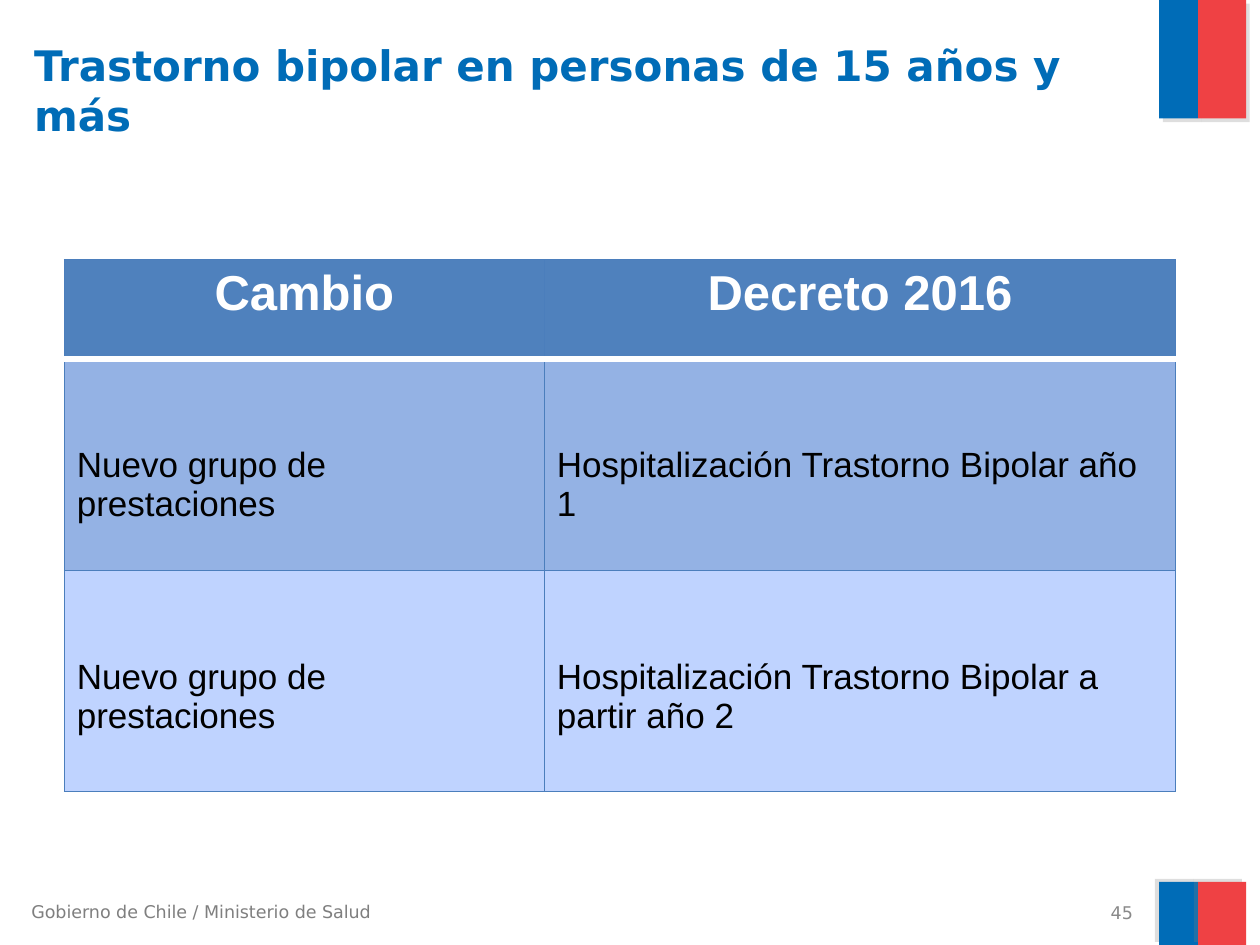
from lxml.etree import SubElement
from pptx import Presentation
from pptx.dml.color import RGBColor as Rgb
from pptx.enum.shapes import MSO_SHAPE as Shape
from pptx.enum.text import MSO_ANCHOR as Anchor, MSO_AUTO_SIZE as AutoSize, PP_ALIGN as Align
from pptx.oxml.ns import qn
from pptx.util import Inches, Pt

COLORS = {
    "blue": "006CB7", "red": "EF4144", "shadow": "808080",
    "footer": "7F7F7F", "number": "898989",
    "header": "4F81BD", "border": "4B7EBC", "white": "FFFFFF", "black": "000000",
    "row_dark": "94B2E4", "row_light": "BFD3FF",
}
HEADING_FONT, TABLE_FONT = "DejaVu Sans", "Arial"
BANDS = [("blue", 9.2, 0.31), ("red", 9.51, 0.38)]  # colour, left, width
COLUMNS = [3.81, 5.01]
ROWS = [0.79, 1.68, 1.75]
CONTENT = [
    ["Cambio", "Decreto 2016"],
    ["Nuevo grupo de prestaciones", "Hospitalización Trastorno Bipolar año 1"],
    ["Nuevo grupo de prestaciones", "Hospitalización Trastorno Bipolar a partir año 2"],
]


def color(name):
    return Rgb.from_string(COLORS[name])


def write(frame, text, size, font, ink, bold=False, align=Align.LEFT):
    frame.text = text
    para = frame.paragraphs[0]
    para.alignment = align
    for span in para.runs:
        span.font.size, span.font.name, span.font.bold = Pt(size), font, bold
        span.font.color.rgb = color(ink)


def add_band(page, name, left, top, width, height, angle):
    """A flag stripe with a hard, translucent shadow."""
    band = page.shapes.add_shape(
        Shape.RECTANGLE, Inches(left), Inches(top), Inches(width), Inches(height))
    band.fill.solid()
    band.fill.fore_color.rgb = color(name)
    band.line.fill.background()
    band.shadow.inherit = False
    effects = band._element.spPr.find(qn("a:effectLst"))
    shadow = SubElement(effects, qn("a:outerShdw"), blurRad="0", dist=str(Pt(3)),
                        dir=str(angle * 60000), algn="ctr", rotWithShape="0")
    tint = SubElement(shadow, qn("a:srgbClr"), val=COLORS["shadow"])
    SubElement(tint, qn("a:alpha"), val="25000")


def add_label(page, text, left, top, width, height, ink, align=Align.LEFT):
    box = page.shapes.add_textbox(Inches(left), Inches(top), Inches(width), Inches(height))
    box.text_frame.word_wrap = True
    box.text_frame.vertical_anchor = Anchor.MIDDLE
    write(box.text_frame, text, 10, HEADING_FONT, ink, align=align)


def format_title(page, text):
    title = page.shapes.title
    title.left, title.top = Inches(0.17), Inches(0.26)
    title.width, title.height = Inches(8.93), Inches(1.25)
    frame = title.text_frame
    frame.auto_size = AutoSize.NONE
    frame.vertical_anchor = Anchor.TOP
    write(frame, text, 24, HEADING_FONT, "blue", bold=True)


def set_borders(cell, **edges):
    """Draw cell edges; each is a (colour, points) pair."""
    props = cell._tc.get_or_add_tcPr()
    for index, side in enumerate(("L", "R", "T", "B")):
        name, points = edges.get(side, ("border", 0.5))
        line = props.makeelement(qn(f"a:ln{side}"), {"w": str(Pt(points))})
        fill = SubElement(line, qn("a:solidFill"))
        SubElement(fill, qn("a:srgbClr"), val=COLORS[name])
        props.insert(index, line)


def add_change_table(page, left, top):
    frame = page.shapes.add_table(
        len(ROWS), len(COLUMNS), Inches(left), Inches(top),
        Inches(sum(COLUMNS)), Inches(sum(ROWS)))
    table = frame.table
    for column, width in zip(table.columns, COLUMNS):
        column.width = Inches(width)
    rule = ("white", 3.78)  # line between header and body
    fills = ["header", "row_dark", "row_light"]
    edges = [{"B": rule}, {"T": rule}, {}]
    for r, texts in enumerate(CONTENT):
        table.rows[r].height = Inches(ROWS[r])
        for c, text in enumerate(texts):
            cell = table.cell(r, c)
            cell.fill.solid()
            cell.fill.fore_color.rgb = color(fills[r])
            set_borders(cell, **edges[r])
            if r == 0:
                write(cell.text_frame, text, 28, TABLE_FONT, "white", True, Align.CENTER)
            else:
                cell.margin_top = Inches(0.69)
                write(cell.text_frame, text, 20, TABLE_FONT, "black")


def main():
    deck = Presentation()
    deck.slide_width, deck.slide_height = Inches(10), Inches(7.5)
    page = deck.slides.add_slide(deck.slide_layouts[5])

    # Flag stripes at the top and bottom corners
    for top, height, angle in [(0, 0.94, 45), (7, 0.5, 215)]:
        for name, left, width in BANDS:
            add_band(page, name, left, top, width, height, angle)

    # Title and table
    format_title(page, "Trastorno bipolar en personas de 15 años y más")
    add_change_table(page, 0.51, 2.06)

    # Footer
    add_label(page, "Gobierno de Chile / Ministerio de Salud", 0.15, 7.1, 3.02, 0.27, "footer")
    add_label(page, "45", 6.76, 7.14, 2.33, 0.21, "number", Align.RIGHT)

    deck.save("out.pptx")


if __name__ == "__main__":
    main()
